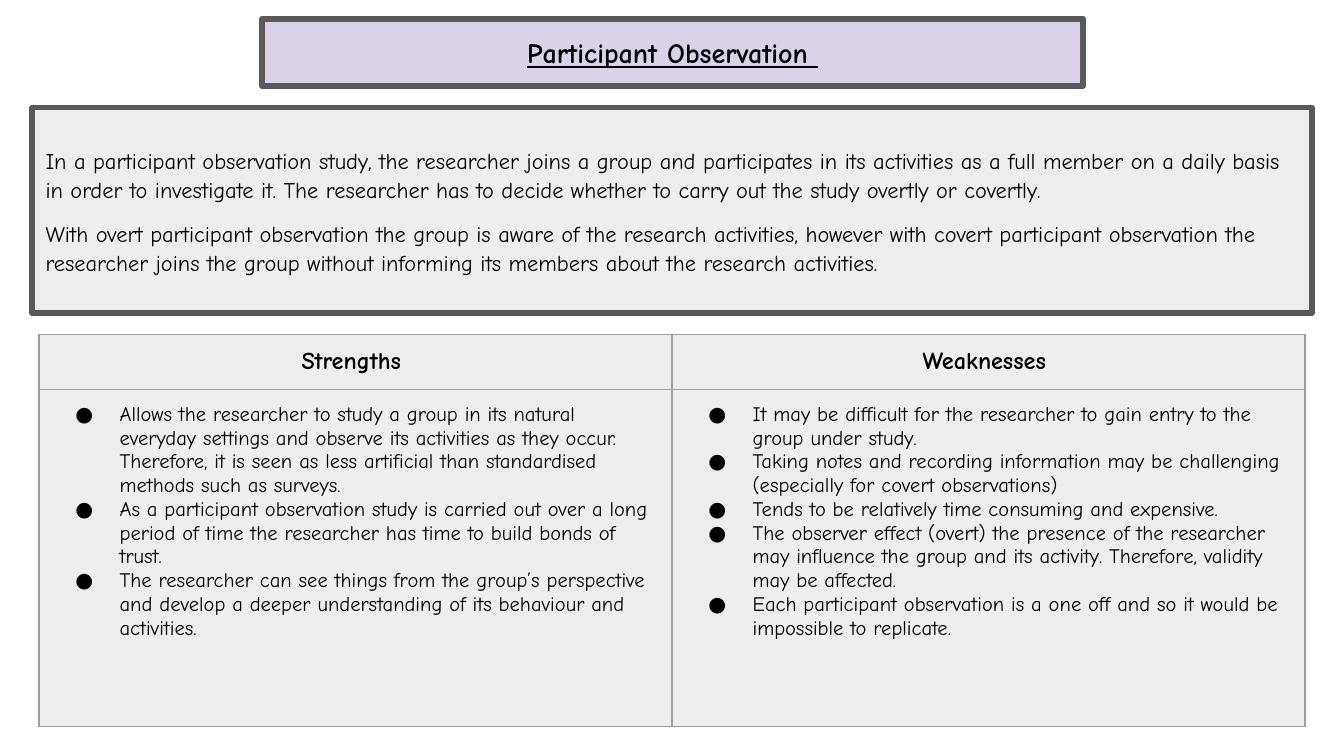
from dataclasses import dataclass

from lxml import etree
from pptx import Presentation
from pptx import util as u
from pptx.dml.color import RGBColor
from pptx.enum import shapes, text
from pptx.oxml import ns


@dataclass(frozen=True)
class Theme:
    font: str = "Comic Neue"
    ink: str = "000000"
    title_fill: str = "D9D2E9"
    panel_fill: str = "EEEEEE"
    frame: str = "595959"
    grid: str = "9E9E9E"
    title_size: float = 15
    intro_size: float = 12
    heading_size: float = 13
    point_size: float = 11
    frame_width: float = 3
    grid_width: float = 0.75
    inset: float = 0.1


@dataclass(frozen=True)
class Panel:
    left: float
    top: float
    width: float
    height: float
    fill: str


@dataclass(frozen=True)
class Column:
    heading: str
    points: tuple[str, ...]


THEME = Theme()
TITLE = Panel(1.95, 0.14, 6.11, 0.5, THEME.title_fill)
INTRO = Panel(0.24, 0.8, 9.52, 1.53, THEME.panel_fill)
INTRO_TEXT = (
    "In a participant observation study, the researcher joins a group and participates in its "
    "activities as a full member on a daily basis in order to investigate it. The researcher has "
    "to decide whether to carry out the study overtly or covertly.",
    "With overt participant observation the group is aware of the research activities, however "
    "with covert participant observation the researcher joins the group without informing its "
    "members about the research activities.",
)
COLUMNS = (
    Column("Strengths ", (
        "Allows the researcher to study a group in its natural everyday settings and observe its "
        "activities as they occur. Therefore, it is seen as less artificial than standardised "
        "methods such as surveys.",
        "As a participant observation study is carried out over a long period of time the "
        "researcher has time to build bonds of trust.",
        "The researcher can see things from the group’s perspective and develop a deeper "
        "understanding of its behaviour and activities.",
    )),
    Column("Weaknesses ", (
        "It may be difficult for the researcher to gain entry to the group under study.",
        "Taking notes and recording information may be challenging (especially for covert "
        "observations)",
        "Tends to be relatively time consuming and expensive.",
        "The observer effect (overt) the presence of the researcher may influence the group and "
        "its activity. Therefore, validity may be affected.",
        "Each participant observation is a one off and so it would be impossible to replicate.",
    )),
)
COLUMN_WIDTH = 4.71
ROW_HEIGHTS = (0.33, 2.51)


def write(frame, lines: tuple[str, ...], size: float, bold: bool = False,
          align=text.PP_ALIGN.LEFT) -> None:
    frame.text = "\n".join(lines)
    for paragraph in frame.paragraphs:
        paragraph.alignment = align
        for run in paragraph.runs:
            run.font.name = THEME.font
            run.font.size = u.Pt(size)
            run.font.bold = bold
            run.font.color.rgb = RGBColor.from_string(THEME.ink)


def set_margins(holder) -> None:
    for side in ("left", "top", "right", "bottom"):
        setattr(holder, f"margin_{side}", u.Inches(THEME.inset))


def add_panel(slide, panel: Panel):
    box = slide.shapes.add_shape(
        shapes.MSO_SHAPE.RECTANGLE, u.Inches(panel.left), u.Inches(panel.top),
        u.Inches(panel.width), u.Inches(panel.height))
    box.shadow.inherit = False
    box.fill.solid()
    box.fill.fore_color.rgb = RGBColor.from_string(panel.fill)
    box.line.color.rgb = RGBColor.from_string(THEME.frame)
    box.line.width = u.Pt(THEME.frame_width)
    frame = box.text_frame
    frame.word_wrap = True
    frame.vertical_anchor = text.MSO_ANCHOR.MIDDLE
    set_margins(frame)
    return frame


def add_color(parent, tag: str, color: str) -> None:
    holder = etree.SubElement(parent, ns.qn(tag))
    etree.SubElement(holder, ns.qn("a:srgbClr"), val=color)


def add_bullet(paragraph) -> None:
    properties = paragraph._p.get_or_add_pPr()
    properties.set("marL", str(u.Inches(0.5)))
    properties.set("indent", str(u.Inches(-0.33)))
    add_color(properties, "a:buClr", THEME.ink)
    etree.SubElement(properties, ns.qn("a:buFont"), typeface=THEME.font)
    etree.SubElement(properties, ns.qn("a:buChar"), char="●")


def style_cell(cell) -> None:
    properties = cell._tc.get_or_add_tcPr()
    for edge in ("a:lnL", "a:lnR", "a:lnT", "a:lnB"):
        border = etree.SubElement(properties, ns.qn(edge), w=str(u.Pt(THEME.grid_width)))
        add_color(border, "a:solidFill", THEME.grid)
    cell.fill.solid()
    cell.fill.fore_color.rgb = RGBColor.from_string(THEME.panel_fill)
    set_margins(cell)


def add_comparison(slide, columns: tuple[Column, ...]) -> None:
    comparison = slide.shapes.add_table(
        len(ROW_HEIGHTS), len(columns), u.Inches(0.29), u.Inches(2.49),
        u.Inches(COLUMN_WIDTH * len(columns)), u.Inches(sum(ROW_HEIGHTS))).table
    for row, height in zip(comparison.rows, ROW_HEIGHTS):
        row.height = u.Inches(height)
    for index, column in enumerate(columns):
        comparison.columns[index].width = u.Inches(COLUMN_WIDTH)
        heading, points = (comparison.cell(row, index) for row in range(len(ROW_HEIGHTS)))
        write(heading.text_frame, (column.heading,), THEME.heading_size, True,
              text.PP_ALIGN.CENTER)
        write(points.text_frame, column.points, THEME.point_size)
        for point in points.text_frame.paragraphs:
            add_bullet(point)
        for cell in (heading, points):
            style_cell(cell)


def main() -> None:
    deck = Presentation()
    deck.slide_width = u.Inches(10)
    deck.slide_height = deck.slide_width * 9 // 16
    slide = deck.slides.add_slide(deck.slide_layouts[6])

    title = add_panel(slide, TITLE)
    write(title, ("Participant Observation ",), THEME.title_size, True, text.PP_ALIGN.CENTER)
    title.paragraphs[0].runs[0].font.underline = True

    intro = add_panel(slide, INTRO)
    write(intro, INTRO_TEXT, THEME.intro_size)
    for paragraph in intro.paragraphs:
        paragraph.line_spacing = 1.08
    intro.paragraphs[-1].space_before = u.Pt(8)
    intro.paragraphs[-1].space_after = u.Pt(8)

    add_comparison(slide, COLUMNS)
    deck.save("out.pptx")


if __name__ == "__main__":
    main()
